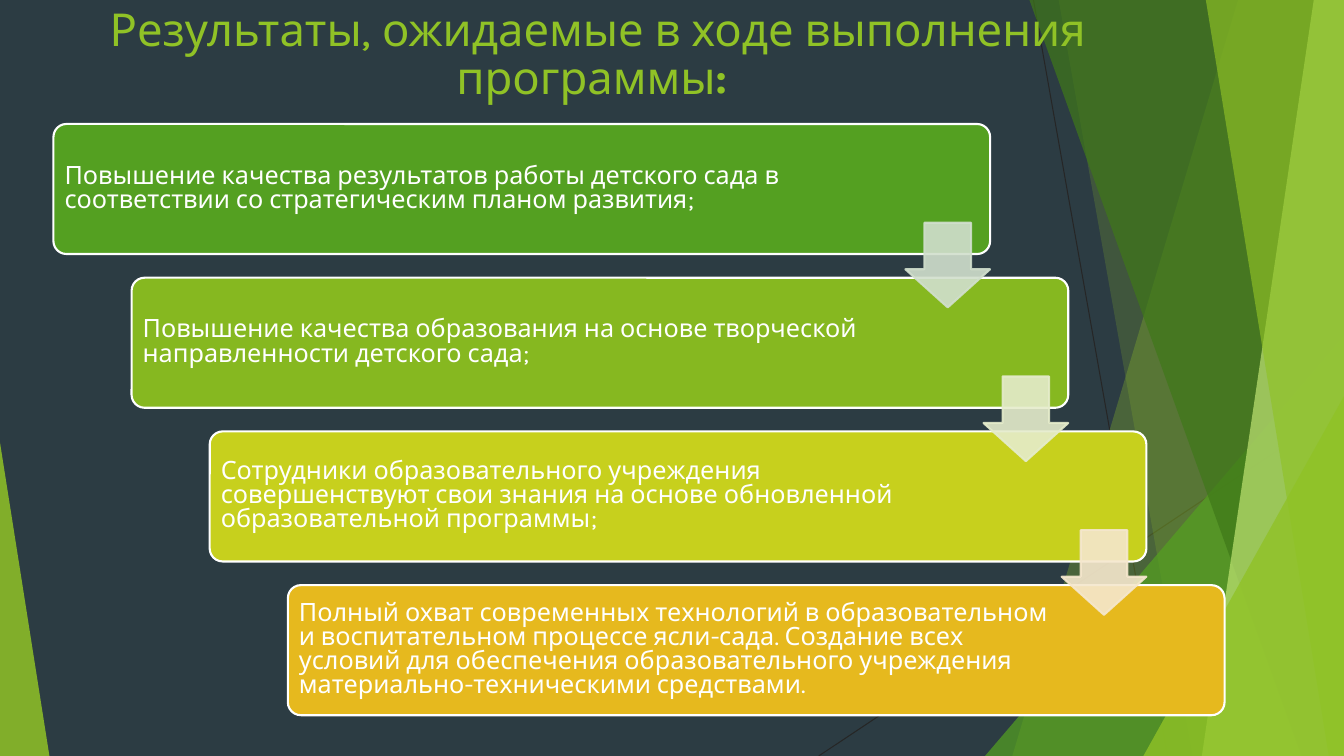
"""Builds the slide of results expected from the kindergarten programme."""
from lxml.etree import SubElement
from pptx import Presentation
from pptx.dml.color import RGBColor
from pptx.enum.shapes import MSO_CONNECTOR, MSO_SHAPE as SHAPE
from pptx.enum.text import MSO_ANCHOR as ANCHOR, PP_ALIGN as ALIGN
from pptx.oxml.ns import qn
from pptx.util import Inches, Pt

COLORS = {
    "background": "2C3C43", "thin": "262626", "white": "FFFFFF",
    "lime": "90C226", "green": "54A021", "forest": "3F7819", "pale": "C0E474",
    "leaf": "86B820", "olive": "C7D01D", "amber": "E6B91E",
    "green arrow": "D1DFCD", "leaf arrow": "E5ECCB", "olive arrow": "F5E7CD",
}
FONT = "Karla"


def paint(fill, color, opacity=100):
    fill.solid()
    fill.fore_color.rgb = RGBColor.from_string(COLORS[color])
    if opacity < 100:
        color_element = fill._xPr.find(qn("a:solidFill"))[0]
        SubElement(color_element, qn("a:alpha")).set("val", str(opacity * 1000))


def add_text(left, top, width, height, inset, anchor):
    frame = slide.shapes.add_textbox(
        Inches(left), Inches(top), Inches(width), Inches(height)).text_frame
    frame.word_wrap = True
    frame.vertical_anchor = anchor
    frame.margin_left = frame.margin_right = Inches(inset)
    frame.margin_top = frame.margin_bottom = Inches(inset)
    return frame.paragraphs[0]


presentation = Presentation()
presentation.slide_width = Inches(13.33)
presentation.slide_height = Inches(7.5)
slide = presentation.slides.add_slide(presentation.slide_layouts[6])
paint(slide.background.fill, "background")

for x1, y1, x2, y2 in [(10.25, 0, 11.58, 7.5), (13.33, 4.03, 8.12, 7.5)]:
    line = slide.shapes.add_connector(
        MSO_CONNECTOR.STRAIGHT, Inches(x1), Inches(y1), Inches(x2), Inches(y2))
    paint(line.line.fill, "thin")
    line.line.width = Pt(0.75)
    SubElement(line._element.spPr, qn("a:effectLst"))

BANDS = "band"
TRIANGLE = "triangle"
facets = [
    (BANDS, (12.28, 10.04), "lime", 30),
    (BANDS, (10.5, 11.83), "lime", 20),
    (TRIANGLE, (9.77, 3.33, 3.56, 4.17, 1), "green", 72),
    (BANDS, (10.21, 12.91), "forest", 70),
    (BANDS, (13.03, 11.92), "pale", 70),
    (BANDS, (11.96, 13.18), "lime", 65),
    (TRIANGLE, (11.34, 3.93, 1.99, 3.57, 1), "lime", 80),
    (TRIANGLE, (0, 4.39, 0.49, 3.11, 0), "lime", 85),
]
for kind, geometry, color, opacity in facets:
    if kind == BANDS:
        top_x, bottom_x = geometry
        builder = slide.shapes.build_freeform(Inches(top_x), 0)
        corners = [(13.33, 0), (13.33, 7.5), (bottom_x, 7.5)]
        builder.add_line_segments([(Inches(x), Inches(y)) for x, y in corners])
        facet = builder.convert_to_shape()
    else:
        *box, apex = geometry
        facet = slide.shapes.add_shape(
            SHAPE.ISOSCELES_TRIANGLE, *[Inches(value) for value in box])
        facet.adjustments[0] = apex
    facet.shadow.inherit = False
    facet.line.fill.background()
    paint(facet.fill, color, opacity)

title = add_text(0.97, 0, 9.92, 1.11, 0.08, ANCHOR.TOP)
title.alignment = ALIGN.CENTER
title.line_spacing = 0.88
title.font.size = Pt(32.4)
title.font.name = FONT
title.font.color.rgb = RGBColor.from_string(COLORS["lime"])
title.add_run().text = "Результаты, ожидаемые в ходе выполнения программы"
colon = title.add_run()
colon.text = ": "
colon.font.bold = True

STEP_X, STEP_Y = 0.775, 1.525
results = [
    ("green", 7.79, "Повышение качества результатов работы детского сада в "
     "соответствии со стратегическим планом развития;"),
    ("leaf", 7.6, "Повышение качества образования на основе творческой "
     "направленности детского сада;"),
    ("olive", 7.6, "Сотрудники образовательного учреждения совершенствуют свои "
     "знания на основе обновленной образовательной программы;"),
    ("amber", 7.6, "Полный охват современных технологий в образовательном и "
     "воспитательном процессе ясли-сада. Создание всех условий для обеспечения "
     "образовательного учреждения материально-техническими средствами."),
]
for index, (color, text_width, text) in enumerate(results):
    left, top = 0.53 + index * STEP_X, 1.23 + index * STEP_Y
    card = slide.shapes.add_shape(
        SHAPE.ROUNDED_RECTANGLE, Inches(left), Inches(top), Inches(9.29), Inches(1.29))
    card.adjustments[0] = 0.1
    card.shadow.inherit = False
    paint(card.fill, color)
    paint(card.line.fill, "white")
    card.line.width = Pt(1.5)

    paragraph = add_text(left + 0.04, top + 0.04, text_width, 1.21, 0.07, ANCHOR.MIDDLE)
    paragraph.text = text
    paragraph.line_spacing = 0.8
    paragraph.font.size = Pt(18)
    paragraph.font.name = FONT
    paragraph.font.color.rgb = RGBColor.from_string(COLORS["white"])

for index, color in enumerate(["green arrow", "leaf arrow", "olive arrow"]):
    arrow = slide.shapes.add_shape(
        SHAPE.DOWN_ARROW, Inches(8.98 + index * STEP_X), Inches(2.21 + index * STEP_Y),
        Inches(0.84), Inches(0.84))
    arrow.adjustments[0] = 0.55
    arrow.adjustments[1] = 0.45
    arrow.shadow.inherit = False
    paint(arrow.fill, color, 90)
    paint(arrow.line.fill, color, 90)
    arrow.line.width = Pt(1.5)

presentation.save("out.pptx")
